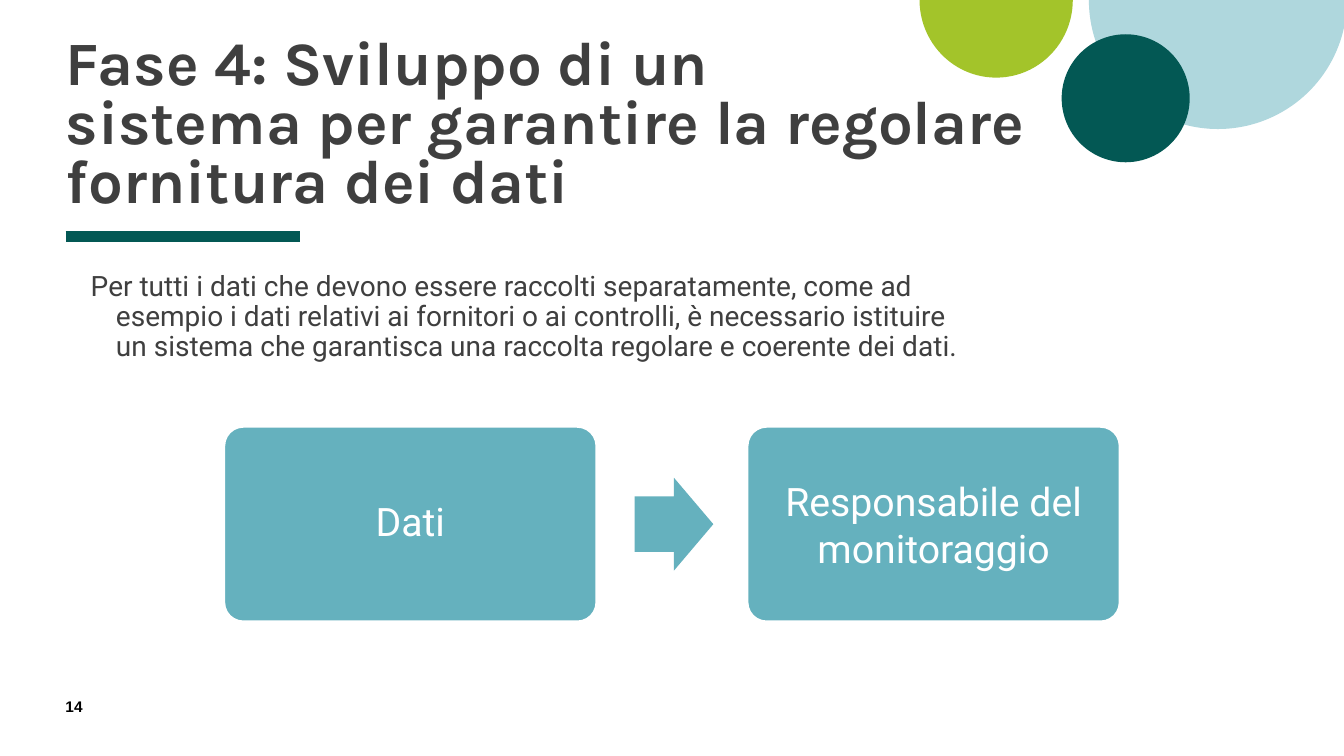
import pptx
import pptx.dml.color
import pptx.enum.shapes
import pptx.enum.text
import pptx.oxml.ns
import pptx.util
from lxml import etree

Inches = pptx.util.Inches
Pt = pptx.util.Pt
SHAPE = pptx.enum.shapes.MSO_SHAPE
ALIGN = pptx.enum.text.PP_ALIGN
ANCHOR = pptx.enum.text.MSO_ANCHOR

COLORS = {"text": "3F3F3F", "dark": "035854", "lime": "A3C42A", "pale": "AFD7DD",
          "teal": "65B1BE", "white": "FFFFFF", "black": "000000"}


def rgb(name):
    return pptx.dml.color.RGBColor.from_string(COLORS[name])


def place(part, box):
    part.left, part.top, part.width, part.height = (Inches(v) for v in box)


def set_frame(frame, insets, anchor):
    frame.word_wrap = True
    frame.auto_size = pptx.enum.text.MSO_AUTO_SIZE.NONE
    frame.vertical_anchor = anchor
    (frame.margin_left, frame.margin_top,
     frame.margin_right, frame.margin_bottom) = (Inches(v) for v in insets)


def add_run(paragraph, text, font, size, color, bold=False):
    run = paragraph.add_run()
    run.text = text
    run.font.name = font
    run.font.size = Pt(size)
    run.font.bold = bold
    run.font.color.rgb = rgb(color)


def add_filled(slide, kind, box, color, adjustments=()):
    shape = slide.shapes.add_shape(kind, *(Inches(v) for v in box))
    shape.shadow.inherit = False
    shape.fill.solid()
    shape.fill.fore_color.rgb = rgb(color)
    shape.line.fill.background()
    for index, value in enumerate(adjustments):
        shape.adjustments[index] = value
    return shape


def add_corner_circles(slide, box):
    left, top = box[:2]
    # Pie angles are in 60000ths of a degree, scaled down by 100000
    half_turn = 180 * 0.6
    add_filled(slide, SHAPE.PIE, (left + 1.68, top - 1.28, 2.56, 2.56), "pale", (0, half_turn))
    add_filled(slide, SHAPE.PIE, (left, top - 0.77, 1.52, 1.54), "lime", (0, half_turn))
    add_filled(slide, SHAPE.OVAL, (left + 1.41, top + 0.34, 1.27, 1.27), "dark")


def add_heading(slide, box, lines):
    title = slide.shapes.title
    place(title, box)
    set_frame(title.text_frame, (0, 0, 0, 0), ANCHOR.BOTTOM)
    heading = title.text_frame.paragraphs[0]
    heading.alignment = ALIGN.LEFT
    heading.line_spacing = 0.8
    for index, line in enumerate(lines):
        if index:
            heading.add_line_break()
        add_run(heading, line, "Karla", 44, "text", bold=True)

    # Rule below the heading
    left, top, _, height = box
    rule_y = Inches(top + height + 0.21)
    rule = slide.shapes.add_connector(pptx.enum.shapes.MSO_CONNECTOR.STRAIGHT,
                                      Inches(left), rule_y, Inches(left + 2.33), rule_y)
    rule.line.color.rgb = rgb("dark")
    rule.line.width = Pt(8)
    etree.SubElement(rule._element.spPr, pptx.oxml.ns.qn("a:effectLst"))


def add_body(slide, box, text):
    body = slide.placeholders[1]
    place(body, box)
    set_frame(body.text_frame, (0, 0.05, 0, 0), ANCHOR.TOP)
    paragraph = body.text_frame.paragraphs[0]
    properties = paragraph._p.get_or_add_pPr()
    properties.set("marL", str(Inches(0.5)))
    properties.set("indent", str(Inches(-0.25)))
    etree.SubElement(properties, pptx.oxml.ns.qn("a:buNone"))
    paragraph.alignment = ALIGN.LEFT
    paragraph.line_spacing = 0.9
    paragraph.space_before = Pt(0)
    add_run(paragraph, text, "Roboto", 20, "text")


def add_flow(slide, box, steps):
    left, top, width, height = box
    step_width, arrow_width, arrow_height = 3.7, 0.78, 0.92
    pitch = (width - step_width) / (len(steps) - 1)
    for index, (step, line_spacing) in enumerate(steps):
        step_left = left + index * pitch
        card = add_filled(slide, SHAPE.ROUNDED_RECTANGLE,
                          (step_left, top, step_width, height), "teal", (0.1,))
        card.line.color.rgb = rgb("white")
        card.line.width = Pt(2)
        set_frame(card.text_frame, (0.15,) * 4, ANCHOR.MIDDLE)
        label = card.text_frame.paragraphs[0]
        label.alignment = ALIGN.CENTER
        label.line_spacing = line_spacing
        add_run(label, step, "Roboto", 28, "white")
        # Arrow from the previous step
        if index:
            gap_center = step_left - (pitch - step_width) / 2
            add_filled(slide, SHAPE.RIGHT_ARROW,
                       (gap_center + 0.02 - arrow_width / 2, top + (height - arrow_height) / 2,
                        arrow_width, arrow_height), "teal", (0.6, 0.5))


def add_page_number(slide, box, number):
    page = slide.shapes.add_textbox(*(Inches(v) for v in box))
    set_frame(page.text_frame, (0, 0, 0, 0), ANCHOR.TOP)
    add_run(page.text_frame.paragraphs[0], number, "Arial", 11, "black", bold=True)


def main():
    deck = pptx.Presentation()
    deck.slide_width = Inches(13.33)
    deck.slide_height = Inches(7.5)
    slide = deck.slides.add_slide(deck.slide_layouts[1])

    add_corner_circles(slide, (9.12, 0, 4.21, 1.61))
    add_heading(slide, (0.65, 0.51, 11.8, 1.63),
                ("Fase 4: Sviluppo di un", "sistema per garantire la regolare",
                 "fornitura dei dati"))
    add_body(slide, (0.65, 2.65, 9, 1.94),
             "Per tutti i dati che devono essere raccolti separatamente, come ad esempio "
             "i dati relativi ai fornitori o ai controlli, è necessario istituire un sistema "
             "che garantisca una raccolta regolare e coerente dei dati.")
    add_flow(slide, (2.22, 4.23, 8.89, 1.94),
             (("Dati", 0.9), ("Responsabile del monitoraggio", 1.0)))
    add_page_number(slide, (0.65, 6.92, 0.57, 0.27), "14")
    deck.save("out.pptx")


if __name__ == "__main__":
    main()
